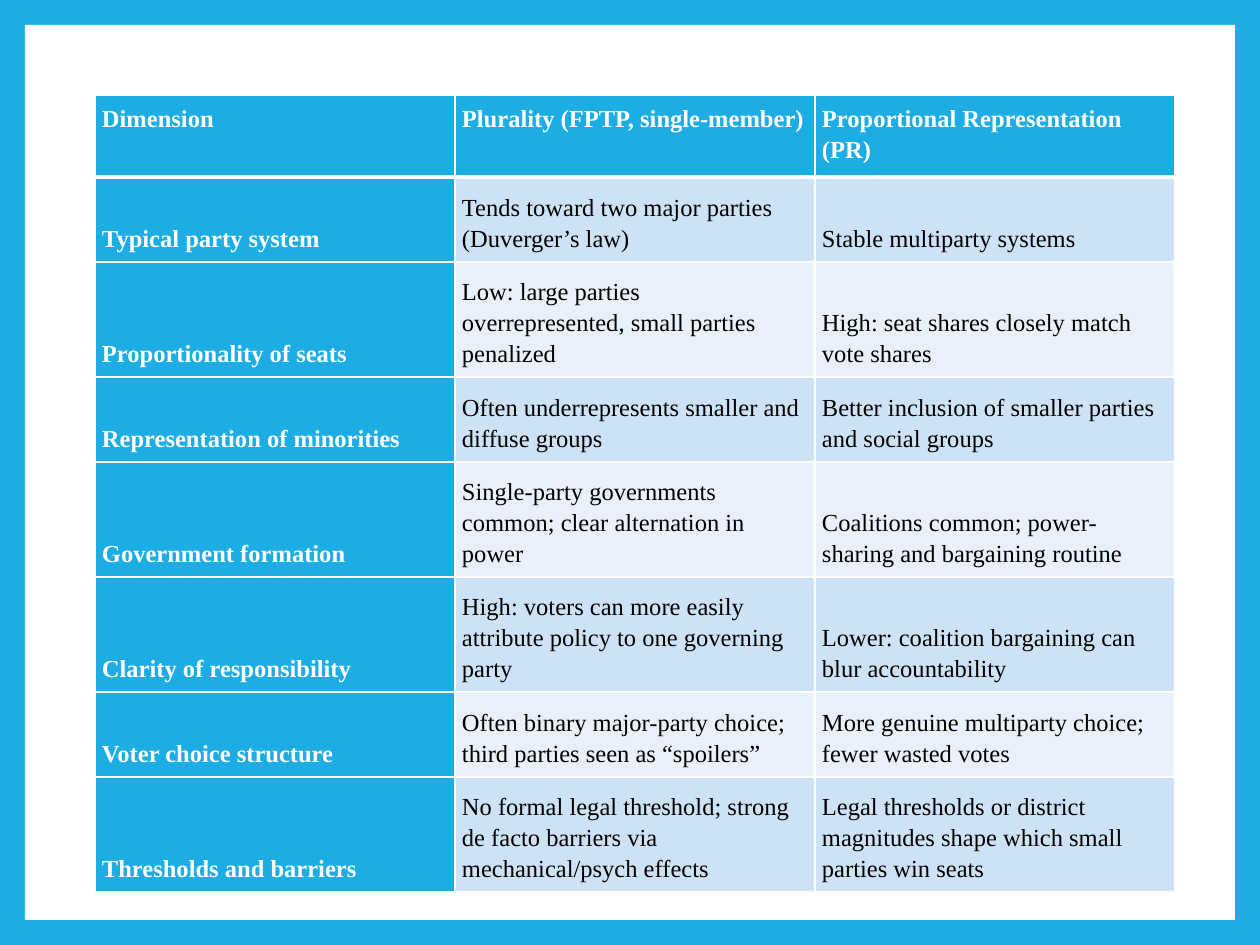
from lxml import etree
from pptx import Presentation
from pptx.dml.color import RGBColor
from pptx.enum.shapes import MSO_SHAPE
from pptx.enum.text import MSO_ANCHOR
from pptx.oxml.ns import qn
from pptx.util import Pt

RECTANGLE = MSO_SHAPE.RECTANGLE
TOP, BOTTOM = MSO_ANCHOR.TOP, MSO_ANCHOR.BOTTOM
EMU_PER_PX = 914400 // 126

COLORS = {
    "accent": "1CADE4",
    "white": "FFFFFF",
    "black": "000000",
    "dark_band": "CDE3F5",
    "light_band": "E8F1FA",
}
PARAGRAPH_FORMAT = {"line_spacing": 1.15, "space_after": Pt(8)}
FONT_FORMAT = {"name": "Times New Roman", "size": Pt(14)}

COLUMN_WIDTH = 360
HEADER_HEIGHT, TWO_LINES, THREE_LINES = 82, 85, 115
HEADER = ("Dimension", "Plurality (FPTP, single‑member)", "Proportional Representation (PR)")
COMPARISONS = [
    (TWO_LINES, "Typical party system",
     "Tends toward two major parties (Duverger’s law)",
     "Stable multiparty systems"),
    (THREE_LINES, "Proportionality of seats",
     "Low: large parties overrepresented, small parties penalized",
     "High: seat shares closely match vote shares"),
    (TWO_LINES, "Representation of minorities",
     "Often underrepresents smaller and diffuse groups",
     "Better inclusion of smaller parties and social groups"),
    (THREE_LINES, "Government formation",
     "Single-party governments common; clear alternation in power",
     "Coalitions common; power-sharing and bargaining routine"),
    (THREE_LINES, "Clarity of responsibility",
     "High: voters can more easily attribute policy to one governing party",
     "Lower: coalition bargaining can blur accountability"),
    (TWO_LINES, "Voter choice structure",
     "Often binary major-party choice; third parties seen as “spoilers”",
     "More genuine multiparty choice; fewer wasted votes"),
    (THREE_LINES, "Thresholds and barriers",
     "No formal legal threshold; strong de facto barriers via mechanical/psych effects",
     "Legal thresholds or district magnitudes shape which small parties win seats"),
]


def px(length):
    return length * EMU_PER_PX


def rgb(name):
    return RGBColor.from_string(COLORS[name])


def apply_format(target, values):
    for name, value in values.items():
        setattr(target, name, value)


def paint(fill, color):
    fill.solid()
    fill.fore_color.rgb = rgb(color)


def add_panel(page, left, top, width, height):
    panel = page.shapes.add_shape(RECTANGLE, px(left), px(top), px(width), px(height))
    panel.shadow.inherit = False
    paint(panel.fill, "white")
    panel.line.fill.background()


def add_borders(cell, widths):
    properties = cell._tc.get_or_add_tcPr()
    for side, points in widths.items():
        line = etree.SubElement(properties, qn(f"a:ln{side}"), w=str(Pt(points)))
        solid = etree.SubElement(line, qn("a:solidFill"))
        etree.SubElement(solid, qn("a:srgbClr"), val=COLORS["white"])


def fill_cell(cell, text, row, column):
    is_header = row == 0
    is_label = is_header or column == 0
    band = "dark_band" if row % 2 else "light_band"
    vertical_margin = px(7 if is_header else 9)
    apply_format(cell, {
        "margin_left": px(7),
        "margin_right": px(7),
        "margin_top": vertical_margin,
        "margin_bottom": vertical_margin,
        "vertical_anchor": TOP if is_header else BOTTOM,
    })
    add_borders(cell, {"L": 1, "R": 1, "T": 3 if row == 1 else 1, "B": 3 if is_header else 1})
    paint(cell.fill, "accent" if is_label else band)
    para = cell.text_frame.paragraphs[0]
    apply_format(para, PARAGRAPH_FORMAT)
    span = para.add_run()
    span.text = text
    apply_format(span.font, {**FONT_FORMAT, "bold": is_label})
    span.font.color.rgb = rgb("white" if is_label else "black")


def add_comparison_table(page, left, top):
    rows = [(HEADER_HEIGHT, *HEADER), *COMPARISONS]
    total_height = sum(height for height, *_ in rows)
    frame = page.shapes.add_table(len(rows), len(HEADER), px(left), px(top),
                                  px(COLUMN_WIDTH * len(HEADER)), px(total_height))
    table = frame.table
    for column in table.columns:
        column.width = px(COLUMN_WIDTH)
    for row, (height, *texts) in enumerate(rows):
        table.rows[row].height = px(height)
        for column, text in enumerate(texts):
            fill_cell(table.cell(row, column), text, row, column)


def main():
    deck = Presentation()
    deck.slide_width, deck.slide_height = px(1260), px(945)
    page = deck.slides.add_slide(deck.slide_layouts[6])
    paint(page.background.fill, "accent")
    add_panel(page, 25, 25, 1210, 895)
    add_comparison_table(page, 95, 95)
    deck.save("out.pptx")


if __name__ == "__main__":
    main()
